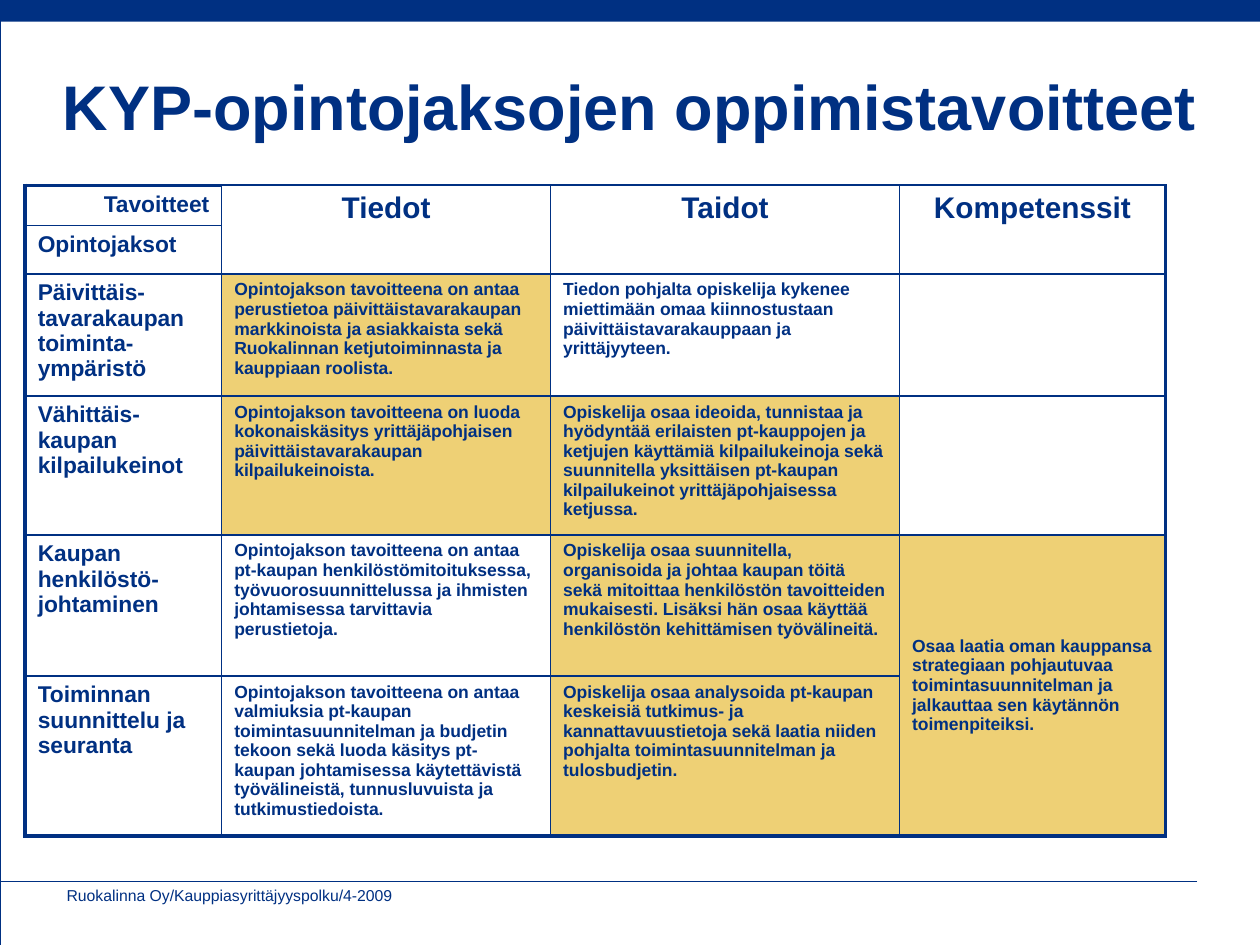
"""Builds the slide of learning goals for the KYP study modules."""
import lxml.etree
import pptx
import pptx.dml.color
import pptx.enum.shapes
import pptx.enum.text
import pptx.oxml.ns
import pptx.util

COLORS = {"navy": "003082", "gold": "EED075"}
ALIGN = pptx.enum.text.PP_ALIGN
ANCHOR = pptx.enum.text.MSO_ANCHOR
THIN, THICK = 1, 2.25
COLUMNS = [1.56, 2.61, 2.77, 2.11]
ROWS = [0.32, 0.32, 0.97, 1.1, 1.12, 1.27]

HEADERS = ["Tiedot", "Taidot", "Kompetenssit"]
MODULES = [
    ("Päivittäis-tavarakaupan toiminta-ympäristö",
     "Opintojakson tavoitteena on antaa perustietoa päivittäistavarakaupan markkinoista ja "
     "asiakkaista sekä Ruokalinnan ketjutoiminnasta ja kauppiaan roolista.",
     "Tiedon pohjalta opiskelija kykenee miettimään omaa kiinnostustaan "
     "päivittäistavarakauppaan ja yrittäjyyteen."),
    ("Vähittäis-kaupan kilpailukeinot",
     "Opintojakson tavoitteena on luoda kokonaiskäsitys yrittäjäpohjaisen "
     "päivittäistavarakaupan kilpailukeinoista.",
     "Opiskelija osaa ideoida, tunnistaa ja hyödyntää erilaisten pt-kauppojen ja ketjujen "
     "käyttämiä kilpailukeinoja sekä suunnitella yksittäisen pt-kaupan kilpailukeinot "
     "yrittäjäpohjaisessa ketjussa."),
    ("Kaupan henkilöstö-johtaminen",
     "Opintojakson tavoitteena on antaa pt-kaupan henkilöstömitoituksessa, "
     "työvuorosuunnittelussa ja ihmisten johtamisessa tarvittavia perustietoja.",
     "Opiskelija osaa suunnitella, organisoida ja johtaa kaupan töitä sekä mitoittaa "
     "henkilöstön tavoitteiden mukaisesti. Lisäksi hän osaa käyttää henkilöstön "
     "kehittämisen työvälineitä."),
    ("Toiminnan suunnittelu ja seuranta",
     "Opintojakson tavoitteena on antaa valmiuksia pt-kaupan toimintasuunnitelman ja budjetin "
     "tekoon sekä luoda käsitys pt-kaupan johtamisessa käytettävistä työvälineistä, "
     "tunnusluvuista ja tutkimustiedoista.",
     "Opiskelija osaa analysoida pt-kaupan keskeisiä tutkimus- ja kannattavuustietoja sekä "
     "laatia niiden pohjalta toimintasuunnitelman ja tulosbudjetin."),
]
COMPETENCE = ("Osaa laatia oman kauppansa strategiaan pohjautuvaa toimintasuunnitelman ja "
              "jalkauttaa sen käytännön toimenpiteiksi.")
GOLD_CELLS = {(2, 1), (3, 1), (3, 2), (4, 2), (5, 2), (4, 3)}


class SlideBuilder:
    """Holds the style and the current slide; places are shares of the slide's size."""

    def __init__(self, presentation, font="Arial"):
        self.presentation = presentation
        self.font = font
        self.slide = presentation.slides.add_slide(presentation.slide_layouts[6])

    def place(self, *shares):
        sizes = (self.presentation.slide_width, self.presentation.slide_height) * 2
        return [round(share * size) for share, size in zip(shares, sizes)]

    def color(self, name):
        return pptx.dml.color.RGBColor.from_string(COLORS[name])

    def set_text(self, text_frame, text, size, bold=True, align=ALIGN.LEFT):
        paragraph = text_frame.paragraphs[0]
        paragraph.text = text
        paragraph.alignment = align
        paragraph.font.name = self.font
        paragraph.font.size = pptx.util.Pt(size)
        paragraph.font.bold = bold
        paragraph.font.color.rgb = self.color("navy")

    def rectangle(self, place, fill=None, line_width=None):
        shape = self.slide.shapes.add_shape(
            pptx.enum.shapes.MSO_SHAPE.RECTANGLE, *self.place(*place))
        shape.shadow.inherit = False
        self.set_fill(shape.fill, fill)
        if line_width:
            shape.line.color.rgb = self.color("navy")
            shape.line.width = pptx.util.Pt(line_width)
        else:
            shape.line.fill.background()

    def set_fill(self, fill, name):
        if name:
            fill.solid()
            fill.fore_color.rgb = self.color(name)
        else:
            fill.background()

    def line(self, place, width):
        connector = self.slide.shapes.add_connector(
            pptx.enum.shapes.MSO_CONNECTOR.STRAIGHT, *self.place(*place))
        connector.line.color.rgb = self.color("navy")
        connector.line.width = pptx.util.Pt(width)
        lxml.etree.SubElement(connector._element.spPr, pptx.oxml.ns.qn("a:effectLst"))

    def text(self, place, text, size, **style):
        text_frame = self.slide.shapes.add_textbox(*self.place(*place)).text_frame
        text_frame.word_wrap = True
        text_frame.vertical_anchor = ANCHOR.MIDDLE
        self.set_text(text_frame, text, size, **style)

    def table(self, place, columns, rows):
        table = self.slide.shapes.add_table(
            len(rows), len(columns), *self.place(*place)).table
        table.first_row = table.horz_banding = False
        for column, width in zip(table.columns, columns):
            column.width = pptx.util.Inches(width)
        for row, height in zip(table.rows, rows):
            row.height = pptx.util.Inches(height)
        return table

    def cell(self, table, row, column, text, size, fill=None, **style):
        cell = table.cell(row, column)
        self.set_fill(cell.fill, fill)
        if text:
            self.set_text(cell.text_frame, text, size, **style)

    def borders(self, cell, **widths):
        properties = cell._tc.get_or_add_tcPr()
        for index, (side, width) in enumerate(widths.items()):
            border = lxml.etree.Element(
                pptx.oxml.ns.qn(f"a:ln{side}"), w=str(pptx.util.Pt(width)))
            solid = lxml.etree.SubElement(border, pptx.oxml.ns.qn("a:solidFill"))
            lxml.etree.SubElement(
                solid, pptx.oxml.ns.qn("a:srgbClr"), val=COLORS["navy"])
            properties.insert(index, border)


def add_goal_table(builder):
    table = builder.table((0.02, 0.196, 0.905, 0.68), COLUMNS, ROWS)
    last_row, last_column = len(ROWS) - 1, len(COLUMNS) - 1
    for column in range(1, len(COLUMNS)):
        table.cell(0, column).merge(table.cell(1, column))
    table.cell(4, last_column).merge(table.cell(5, last_column))

    builder.cell(table, 0, 0, "Tavoitteet", 13, align=ALIGN.RIGHT)
    builder.cell(table, 1, 0, "Opintojaksot", 13)
    for column, header in enumerate(HEADERS, 1):
        builder.cell(table, 0, column, header, 17, align=ALIGN.CENTER)
        builder.cell(table, 1, column, "", 17)
    for row, module in enumerate(MODULES, 2):
        competence = COMPETENCE if row == 4 else ""
        for column, text in enumerate((*module, competence)):
            fill = "gold" if (row, column) in GOLD_CELLS else None
            builder.cell(table, row, column, text, 10 if column else 13, fill)
    table.cell(4, last_column).vertical_anchor = ANCHOR.MIDDLE

    for row in range(len(ROWS)):
        for column in range(len(COLUMNS)):
            cell = table.cell(row, column)
            bottom_row = row + (cell.span_height if cell.is_merge_origin else 1) - 1
            builder.borders(
                cell,
                L=THICK if column == 0 else THIN,
                R=THICK if column == last_column else THIN,
                T=THICK if row == column == 0 else THIN,
                B=THICK if bottom_row == last_row else THIN)


def main():
    presentation = pptx.Presentation()
    presentation.slide_width = pptx.util.Inches(10)
    presentation.slide_height = pptx.util.Inches(7.5)
    builder = SlideBuilder(presentation)
    builder.rectangle((0, 0, 1, 0.023), fill="navy")
    builder.rectangle((0, 0, 1, 1), line_width=0.1)
    builder.text((0.043, 0.93, 0.307, 0.034),
                 "Ruokalinna Oy/Kauppiasyrittäjyyspolku/4-2009", 9, bold=False)
    builder.line((0.95, 0.933, 0, 0.933), 0.25)
    builder.text((0, 0.028, 1, 0.167), "KYP-opintojaksojen oppimistavoitteet", 36,
                 align=ALIGN.CENTER)
    add_goal_table(builder)
    presentation.save("out.pptx")


if __name__ == "__main__":
    main()
